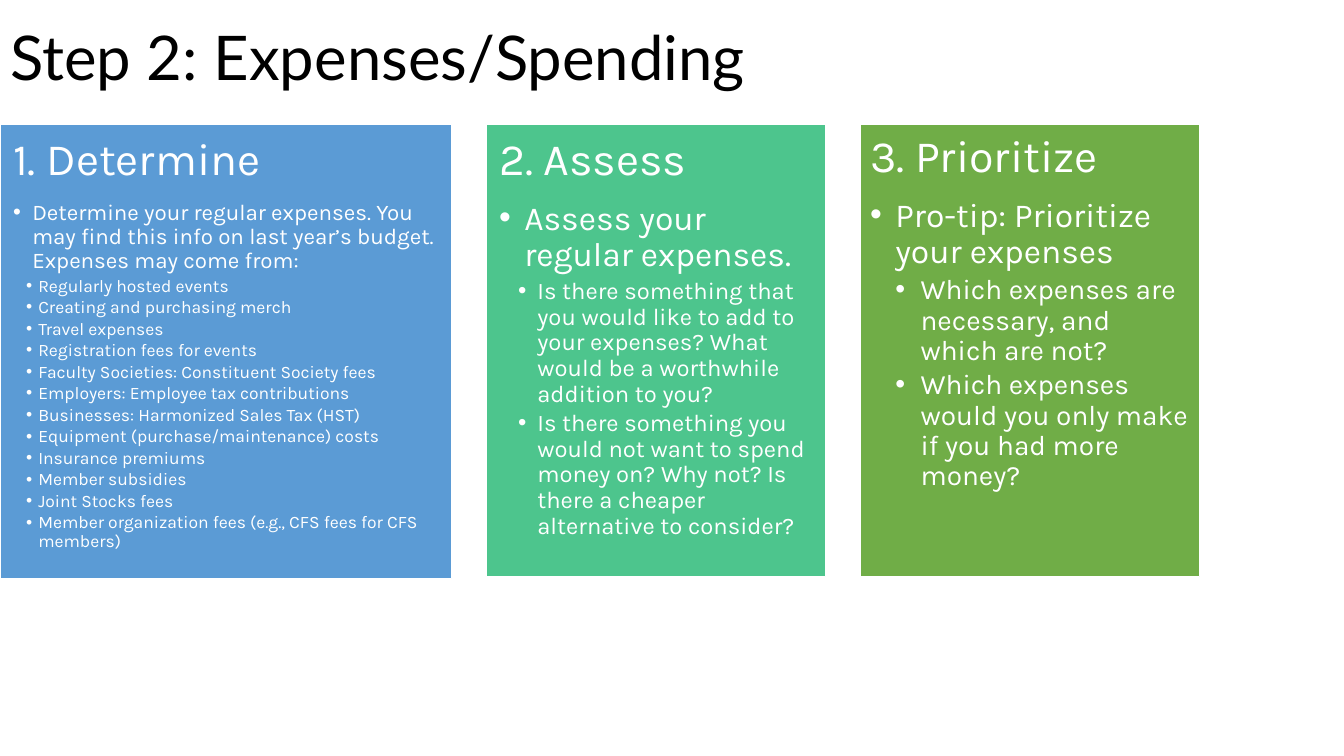
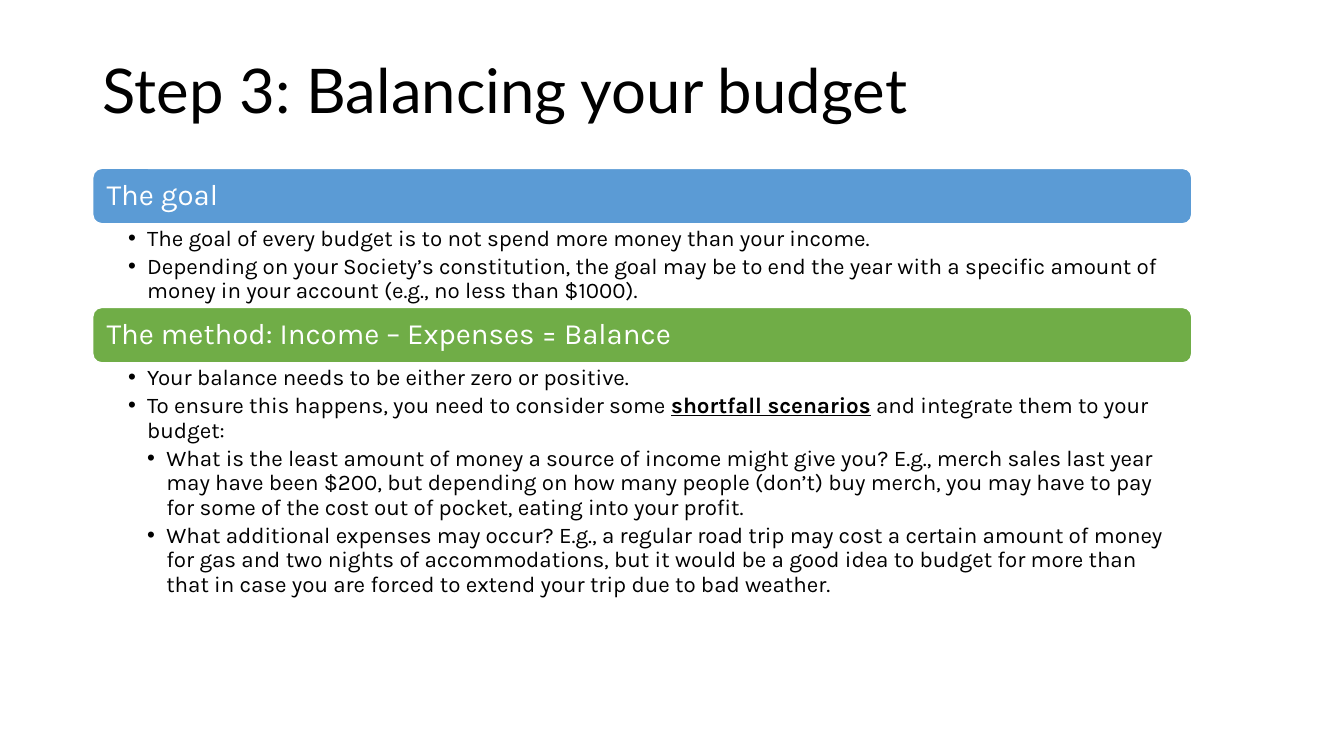
import lxml.etree
import pptx
import pptx.dml.color
import pptx.enum.shapes
import pptx.enum.text
import pptx.oxml.ns
import pptx.util

PX = 9144
COLORS = {
    "blue": "5B9BD5",
    "mint": "4DC58D",
    "green": "70AD47",
    "white": "FFFFFF",
    "black": "000000",
}
TITLE_FONT, TEXT_FONT = "Lato", "Karla"
TITLE_SIZE, BAND_SIZE = 44, 21
HEAD_GAP, PANEL_GAP, LIST_GAP = 0.35, 0.15, 0.2
ANCHOR = pptx.enum.text.MSO_ANCHOR

PANELS = [
    ("blue", 448, 451, 13, [(32, 0, 0), (16, 19, 19), (12.5, 25, 12)], [
        (0, "1. Determine"),
        (1, "Determine your regular expenses. You may find this info on last year’s budget. "
            "Expenses may come from:"),
        (2, "Regularly hosted events"),
        (2, "Creating and purchasing merch"),
        (2, "Travel expenses"),
        (2, "Registration fees for events"),
        (2, "Faculty Societies: Constituent Society fees"),
        (2, "Employers: Employee tax contributions"),
        (2, "Businesses: Harmonized Sales Tax (HST)"),
        (2, "Equipment (purchase/maintenance) costs"),
        (2, "Insurance premiums"),
        (2, "Member subsidies"),
        (2, "Joint Stocks fees"),
        (2, "Member organization fees (e.g., CFS fees for CFS members)"),
    ]),
    ("mint", 337, 449, 13, [(32, 0, 0), (24, 25, 25), (17, 38, 19)], [
        (0, "2. Assess"),
        (1, "Assess your regular expenses."),
        (2, "Is there something that you would like to add to your expenses? "
            "What would be a worthwhile addition to you?"),
        (2, "Is there something you would not want to spend money on? Why not? "
            "Is there a cheaper alternative to consider?"),
    ]),
    ("green", 337, 449, 10, [(32, 0, 0), (24, 25, 25), (20, 50, 25)], [
        (0, "3. Prioritize"),
        (1, "Pro-tip: Prioritize your expenses"),
        (2, "Which expenses are necessary, and which are not?"),
        (2, "Which expenses would you only make if you had more money?"),
    ]),
]
LIST_STYLE = [(BAND_SIZE, 0, 0), (16, 19, 19), (16, 38, 19)]
PARTS = [
    ("The goal", "blue", 83, [
        (1, "The goal of every budget is to not spend more money than your income."),
        (1, "Depending on your Society’s constitution, the goal may be to end the year with "
            "a specific amount of money in your account (e.g., no less than $1000)."),
    ]),
    ("The method: Income – Expenses = Balance", "green", 242, [
        (1, "Your balance needs to be either zero or positive."),
        (1, "To ensure this happens, you need to consider some *shortfall scenarios* "
            "and integrate them to your budget:"),
        (2, "What is the least amount of money a source of income might give you? E.g., merch "
            "sales last year may have been $200, but depending on how many people (don’t) buy "
            "merch, you may have to pay for some of the cost out of pocket, eating into your "
            "profit."),
        (2, "What additional expenses may occur? E.g., a regular road trip may cost a certain "
            "amount of money for gas and two nights of accommodations, but it would be a good "
            "idea to budget for more than that in case you are forced to extend your trip due "
            "to bad weather."),
    ]),
]


class Deck:
    """Holds the shared style and the current slide."""

    def __init__(self):
        self.show = pptx.Presentation()
        self.show.slide_width = 1333 * PX
        self.show.slide_height = 750 * PX
        self.slide = None
        self.bodies = []

    def tint(self, name):
        return pptx.dml.color.RGBColor.from_string(COLORS[name])

    def paint(self, shape, color):
        shape.fill.solid()
        shape.fill.fore_color.rgb = self.tint(color)
        shape.line.color.rgb = self.tint("white")
        shape.line.width = pptx.util.Pt(1)

    def place(self, shape, box):
        shape.left, shape.top, shape.width, shape.height = [n * PX for n in box]

    def frame(self, shape, pads, anchor):
        frame = shape.text_frame
        frame.word_wrap = True
        frame.auto_size = pptx.enum.text.MSO_AUTO_SIZE.NONE
        frame.vertical_anchor = anchor
        (frame.margin_left, frame.margin_top,
         frame.margin_right, frame.margin_bottom) = [n * PX for n in pads]
        return frame

    def format(self, para, size, color, font=TEXT_FONT):
        para.alignment = pptx.enum.text.PP_ALIGN.LEFT
        para.line_spacing = 0.9
        para.space_before = pptx.util.Pt(0)
        for run in para.runs:
            run.font.name = font
            run.font.size = pptx.util.Pt(size)
            run.font.color.rgb = self.tint(color)

    def start(self, layout, title, box):
        self.slide = self.show.slides.add_slide(self.show.slide_layouts.get_by_name(layout))
        head = self.slide.shapes.title
        self.bodies = [p for p in self.slide.placeholders if p.placeholder_format.idx > 0]
        self.place(head, box)
        frame = self.frame(head, (10, 5, 10, 5), ANCHOR.MIDDLE)
        frame.text = title
        self.format(frame.paragraphs[0], TITLE_SIZE, "black", TITLE_FONT)

    def list(self, box, rows, style, pads, color, gap):
        body = self.bodies.pop(0)
        self.place(body, box)
        frame = self.frame(body, pads, ANCHOR.TOP)
        for spot, (level, text) in enumerate(rows):
            para = frame.add_paragraph() if spot else frame.paragraphs[0]
            size, left, hang = style[level]
            para.level = level
            props = para._p.get_or_add_pPr()
            props.set("marL", str(left * PX))
            props.set("indent", str(-hang * PX))
            mark = lxml.etree.SubElement(
                props, pptx.oxml.ns.qn("a:buChar" if level else "a:buNone"))
            if level:
                mark.set("char", "•")
            for turn, part in enumerate(text.split("*")):
                run = para.add_run()
                run.text = part
                run.font.bold = run.font.underline = turn % 2 == 1
            self.format(para, size, color)
            para.space_after = pptx.util.Pt(size * (gap if level else HEAD_GAP))
        return body

    def panel(self, box, rows, style, pad, color):
        body = self.list(box, rows, style, [pad] * 4, "white", PANEL_GAP)
        self.paint(body, color)

    def band(self, box, text, color):
        kind = pptx.enum.shapes.MSO_SHAPE.ROUNDED_RECTANGLE
        shape = self.slide.shapes.add_shape(kind, *[n * PX for n in box])
        shape.shadow.inherit = False
        self.paint(shape, color)
        frame = self.frame(shape, (11, 9, 11, 9), ANCHOR.MIDDLE)
        frame.text = text
        self.format(frame.paragraphs[0], BAND_SIZE, "white")

    def clean(self):
        for body in self.bodies:
            body.element.getparent().remove(body.element)


def main():
    deck = Deck()

    deck.start("Comparison", "Step 2: Expenses/Spending", (0, -12, 797, 145))
    left = 0
    for color, width, height, pad, style, rows in PANELS:
        deck.panel((left, 123, width, height), rows, style, pad, color)
        left += width + 34
    deck.clean()

    deck.start("Two Content", "Step 3: Balancing your budget", (92, 20, 1090, 145))
    top, high = 167, 55
    for text, color, height, rows in PARTS:
        deck.band((92, top, 1090, high), text, color)
        deck.list((92, top + high, 1090, height), rows, LIST_STYLE,
                  (35, 3, 16, 3), "black", LIST_GAP)
        top += high + height
    deck.clean()

    deck.show.save("out.pptx")


if __name__ == "__main__":
    main()
